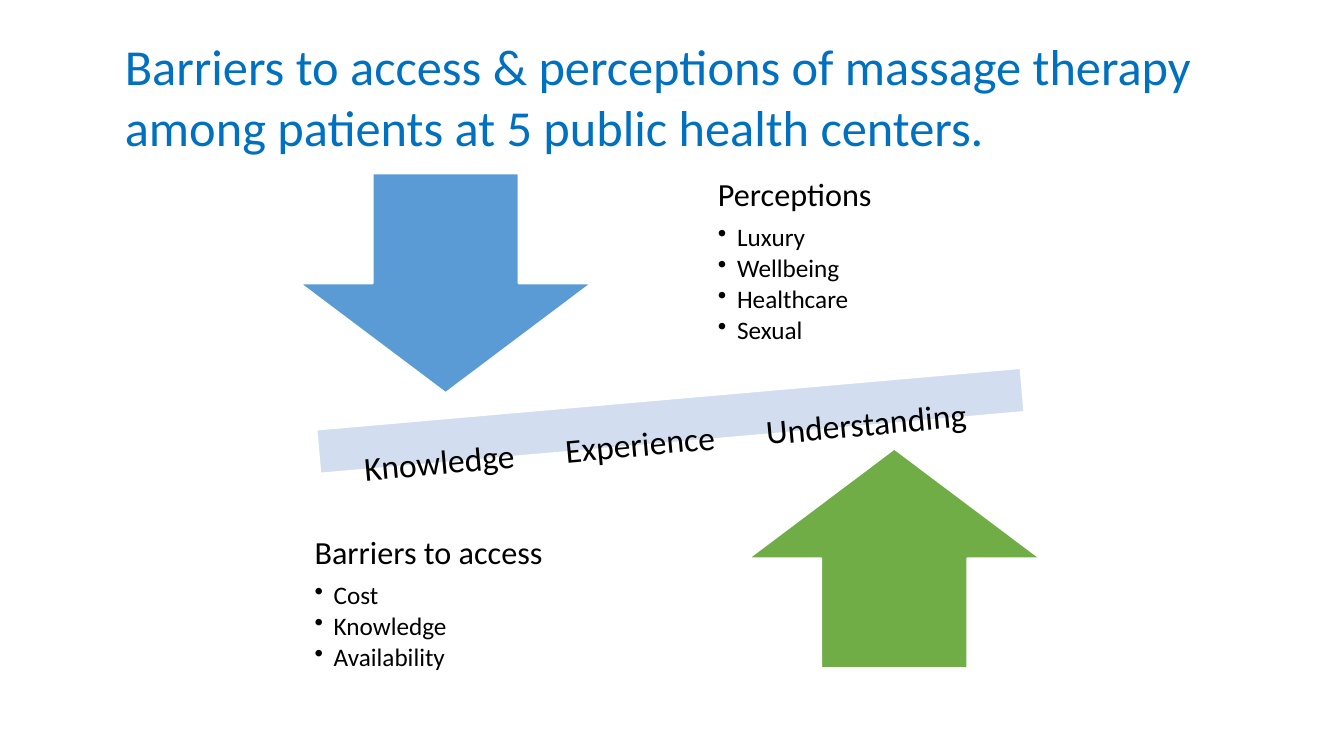
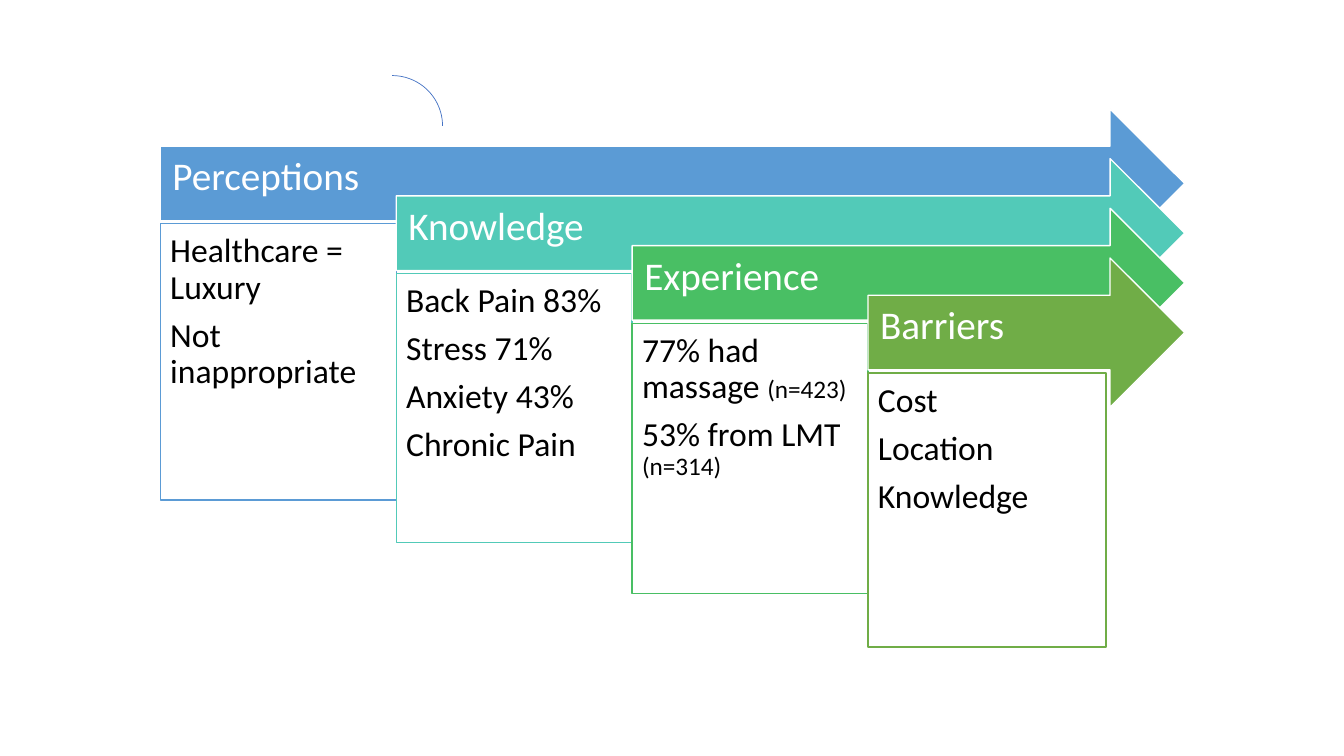
"""Build two slides on perceptions of massage therapy and barriers to access."""
from pptx import Presentation
from pptx.dml.color import RGBColor
from pptx.enum.shapes import MSO_SHAPE
from pptx.enum.text import MSO_ANCHOR, PP_ALIGN
from pptx.oxml.ns import qn
from pptx.util import Inches, Pt
from lxml import etree

BEAM, DOWN, UP = MSO_SHAPE.MATH_MINUS, MSO_SHAPE.DOWN_ARROW, MSO_SHAPE.UP_ARROW
RIGHT, BOX, ARC = MSO_SHAPE.RIGHT_ARROW, MSO_SHAPE.RECTANGLE, MSO_SHAPE.ARC
TOP, MIDDLE = MSO_ANCHOR.TOP, MSO_ANCHOR.MIDDLE
LEFT = PP_ALIGN.LEFT


class Theme:
    font = "Calibri"
    title, text, white = "0070C0", "000000", "FFFFFF"
    blue, teal, emerald, green = "5B9BD5", "52CAB8", "49BF64", "70AD47"
    beam, arc = "D2DEEF", "4472C4"
    title_size, stage_size, body_size = 36, 28, 24
    heading_size, small_size = 23, 18


def write(frame, text, size=Theme.body_size, color=Theme.text, note="",
          spacing=None, after=0, bullet=False, tabs=()):
    paragraph = frame.paragraphs[0]
    if paragraph.runs:
        paragraph = frame.add_paragraph()
    paragraph.alignment = LEFT
    if spacing:
        paragraph.line_spacing = spacing
        paragraph.space_after = Pt(round(size * after, 1))
    properties = paragraph._p.get_or_add_pPr()
    if bullet:
        paragraph.level = 1
        properties.set("marL", str(Inches(0.19)))
        properties.set("indent", str(Inches(-0.19)))
        etree.SubElement(properties, qn("a:buChar")).set("char", "•")
    if tabs:
        stops = etree.SubElement(properties, qn("a:tabLst"))
        for position in tabs:
            stop = etree.SubElement(stops, qn("a:tab"))
            stop.set("pos", str(Inches(position)))
            stop.set("algn", "l")
    for words, points in ((text, size), (note, Theme.small_size)):
        if words:
            run = paragraph.add_run()
            run.text = words
            run.font.name = Theme.font
            run.font.size = Pt(points)
            run.font.color.rgb = RGBColor.from_string(color)


class Deck:
    def __init__(self):
        self.presentation = Presentation()
        self.presentation.slide_width = Inches(13.33)
        self.presentation.slide_height = Inches(7.5)
        self.slide = None

    def new_slide(self):
        layout = self.presentation.slide_layouts[6]
        self.slide = self.presentation.slides.add_slide(layout)

    def frame(self, holder, insets, anchor):
        frame = holder.text_frame
        frame.word_wrap = True
        frame.vertical_anchor = anchor
        (frame.margin_left, frame.margin_top,
         frame.margin_right, frame.margin_bottom) = map(Inches, insets)
        return frame

    def text_box(self, area, insets=(0.1, 0.05, 0.1, 0.05), anchor=TOP, rotation=0):
        box = self.slide.shapes.add_textbox(*map(Inches, area))
        box.rotation = rotation
        return self.frame(box, insets, anchor)

    def shape(self, kind, area, fill=None, line=Theme.white, weight=1.5, rotation=0):
        shape = self.slide.shapes.add_shape(kind, *map(Inches, area))
        shape.shadow.inherit = False
        shape.rotation = rotation
        if fill:
            shape.fill.solid()
            shape.fill.fore_color.rgb = RGBColor.from_string(fill)
        else:
            shape.fill.background()
        shape.line.color.rgb = RGBColor.from_string(line)
        shape.line.width = Pt(weight)
        return shape

    def title(self, text):
        write(self.text_box((1.14, 0.3, 11.36, 1.31)), text,
              size=Theme.title_size, color=Theme.title)

    def bullet_list(self, area, heading, items):
        frame = self.text_box(area, (0.18,) * 4, MIDDLE)
        write(frame, heading, size=Theme.heading_size, spacing=0.9, after=0.35)
        for item in items:
            write(frame, item, size=Theme.small_size, spacing=0.9, after=0.15, bullet=True)

    def stage(self, left, top, box_size, name, color, findings):
        arrow = self.shape(RIGHT, (left, top, 11.75 - left, 1.48), color, weight=1)
        write(self.frame(arrow, (0.12, 0.12, 0.28, 0.23), MIDDLE), name,
              size=Theme.stage_size, color=Theme.white, spacing=0.9, after=0.35)
        box = self.shape(BOX, (left, top + 1.14, *box_size), Theme.white, color, weight=1)
        frame = self.frame(box, (0.1,) * 4, TOP)
        for finding, note in findings:
            write(frame, finding, note=note, spacing=0.9, after=0.35)


def balance_slide(deck):
    deck.new_slide()
    deck.shape(BEAM, (1.88, 3.24, 9.54, 1.87), Theme.beam, rotation=355)
    deck.shape(DOWN, (2.97, 1.72, 2.9, 2.18), Theme.blue)
    deck.bullet_list((6.94, 1.45, 3.09, 2.29), "Perceptions",
                     ["Luxury", "Wellbeing", "Healthcare", "Sexual"])
    deck.shape(UP, (7.42, 4.45, 2.9, 2.18), Theme.green)
    deck.bullet_list((2.94, 5.08, 4.27, 1.83), "Barriers to access",
                     ["Cost", "Knowledge", "Availability"])
    write(deck.text_box((3.5, 4.09, 6.92, 0.5), rotation=354.8),
          "Knowledge\tExperience\tUnderstanding", tabs=(2, 4))
    deck.title("Barriers to access & perceptions of massage therapy "
               "among patients at 5 public health centers.")


def stages_slide(deck):
    deck.new_slide()
    stages = [
        ("Perceptions", Theme.blue, (2.34, 2.74),
         [("Healthcare = Luxury", ""), ("Not inappropriate", "")]),
        ("Knowledge", Theme.teal, (2.34, 2.67),
         [("Back Pain 83%", ""), ("Stress 71%", ""),
          ("Anxiety 43%", ""), ("Chronic Pain", "")]),
        ("Experience", Theme.emerald, (2.34, 2.68),
         [("77% had massage ", "(n=423)"), ("53% from LMT ", "(n=314)")]),
        ("Barriers", Theme.green, (2.36, 2.72),
         [("Cost", ""), ("Location", ""), ("Knowledge", "")]),
    ]
    for step, (name, color, box_size, findings) in enumerate(stages):
        deck.stage(1.59 + 2.34 * step, 1.08 + 1.48 * step / 3,
                   box_size, name, color, findings)
    deck.shape(ARC, (3.39, 0.75, 1, 1), line=Theme.arc, weight=0.5)


def main():
    deck = Deck()
    balance_slide(deck)
    stages_slide(deck)
    deck.presentation.save("out.pptx")


if __name__ == "__main__":
    main()
